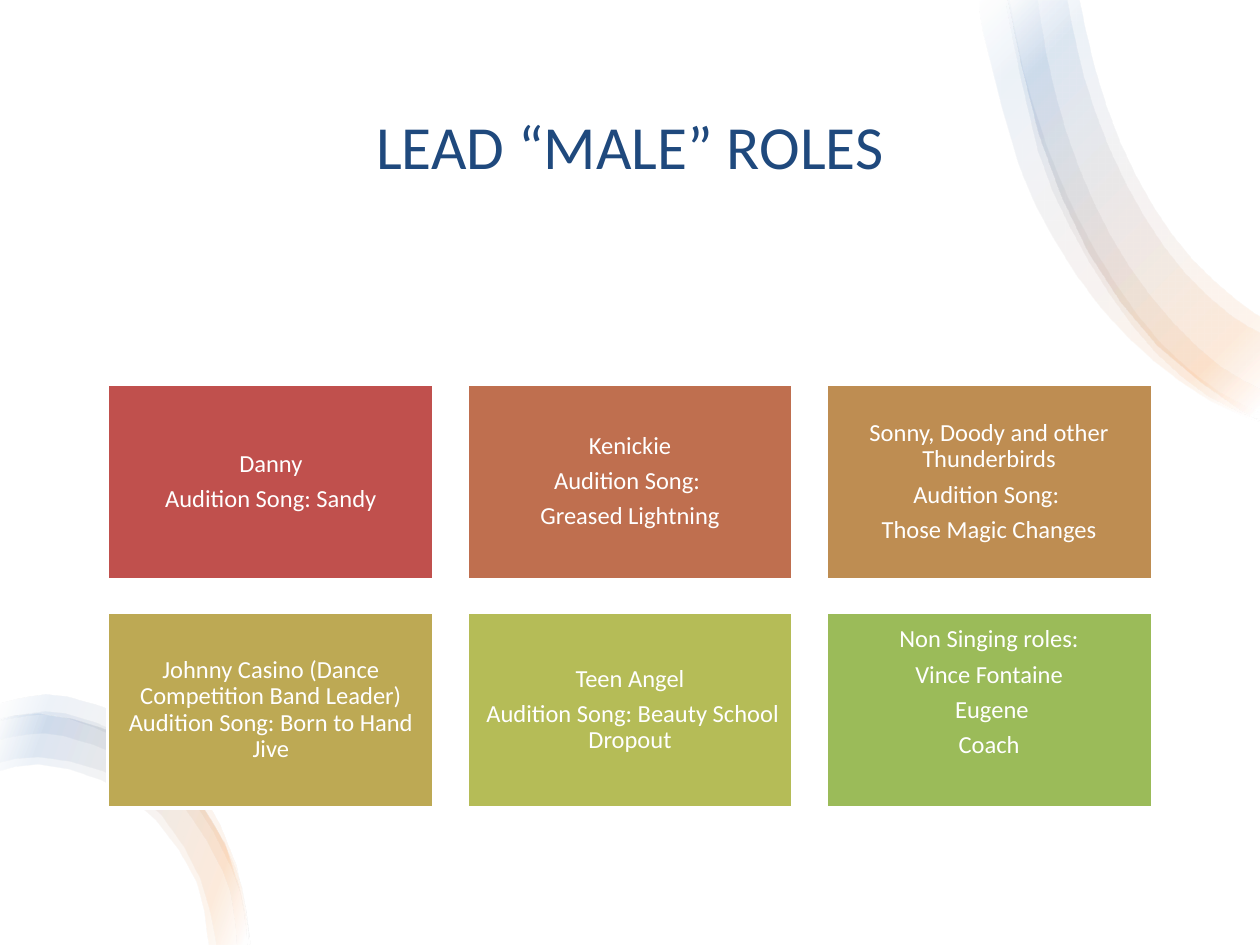
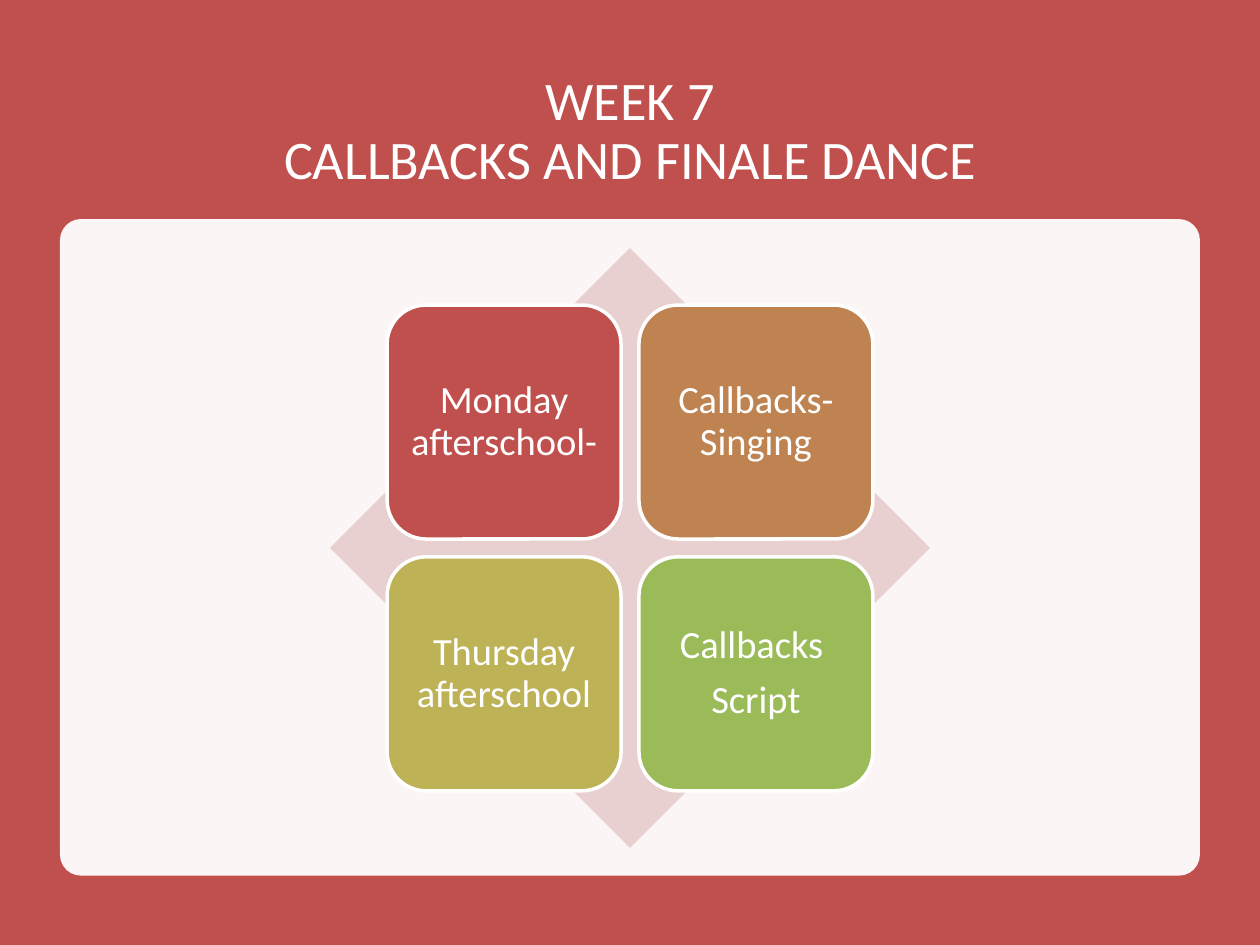
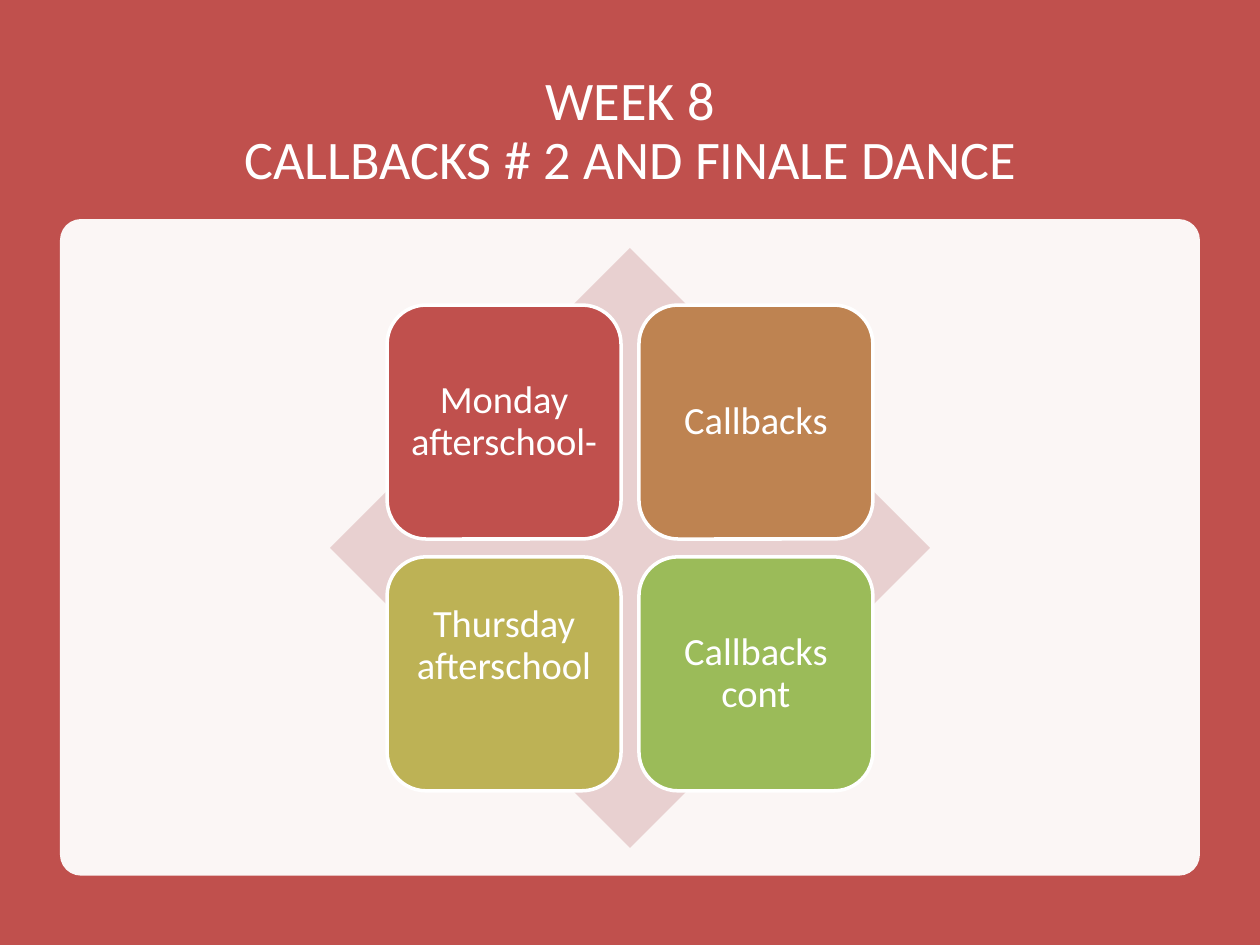
from lxml import etree
from pptx import Presentation
from pptx.dml.color import RGBColor
from pptx.enum import shapes, text
from pptx.oxml.ns import qn
from pptx.util import Pt

WHITE = RGBColor(0xFF, 0xFF, 0xFF)
NAVY = RGBColor(0x1F, 0x49, 0x7D)
BLUE = RGBColor(0x4F, 0x81, 0xBD)
ORANGE = RGBColor(0xF7, 0x96, 0x46)
RED = RGBColor(0xC0, 0x50, 0x4D)
RUST = RGBColor(0xBF, 0x6F, 0x4F)
COPPER = RGBColor(0xBE, 0x83, 0x51)
TAN = RGBColor(0xBE, 0x8D, 0x52)
GOLD = RGBColor(0xBD, 0xA9, 0x54)
OLIVE = RGBColor(0xBD, 0xB2, 0x55)
LIME = RGBColor(0xB5, 0xBC, 0x57)
GREEN = RGBColor(0x9B, 0xBB, 0x59)
PINK = RGBColor(0xE8, 0xD0, 0xD0)

FONT = "Calibri"
SLIDE_W, SLIDE_H = 720, 540
RECT = shapes.MSO_SHAPE.RECTANGLE
ROUND = shapes.MSO_SHAPE.ROUNDED_RECTANGLE
DIAMOND = shapes.MSO_SHAPE.DIAMOND

# Cards: fill, paragraphs, extra room below the text
ROLES = [
    (RED, ["Danny", "Audition Song: Sandy"], 0),
    (RUST, ["Kenickie", "Audition Song: ", "Greased Lightning"], 0),
    (TAN, ["Sonny, Doody and other Thunderbirds", "Audition Song: ", "Those Magic Changes"], 0),
    (GOLD, ["Johnny Casino (Dance Competition Band Leader) Audition Song: Born to Hand Jive"], 0),
    (LIME, ["Teen Angel", " Audition Song: Beauty School Dropout"], 0),
    (GREEN, ["Non Singing roles:", "Vince Fontaine", " Eugene", "Coach"], 20),
]
WEEKS = [
    ("WEEK 7\vCALLBACKS AND FINALE DANCE", [
        (RED, ["Monday afterschool-"], 0),
        (COPPER, ["Callbacks- Singing"], 0),
        (OLIVE, ["Thursday afterschool"], 0),
        (GREEN, ["Callbacks ", "Script"], 0),
    ]),
    ("WEEK 8\vCALLBACKS # 2 AND FINALE DANCE", [
        (RED, ["Monday afterschool- "], 0),
        (COPPER, ["Callbacks"], 0),
        (OLIVE, ["Thursday afterschool"], 32),
        (GREEN, ["Callbacks cont"], 0),
    ]),
]

# Swooshes: gradient angle, then bands as (outer edge, inner edge)
TOP_EDGE = [(720, 239), (707, 233), (661, 197), (622, 144), (594, 77), (577, 3), (576, 0)]
LOW_EDGE = [(142, 540), (141, 529), (128, 482), (100, 443), (63, 418), (22, 408), (0, 412)]
SWOOSHES = [
    (135, [
        ([(720, 241), (693, 230), (660, 207), (629, 176), (603, 138), (582, 94), (562, 19),
          (560, 0)],
         [(577, 0), (584, 37), (598, 83), (616, 125), (638, 163), (664, 197), (695, 223),
          (720, 236)]),
        (TOP_EDGE,
         [(617, 0), (626, 40), (640, 81), (659, 118), (681, 148), (706, 171), (720, 181)]),
        ([(720, 240), (690, 226), (660, 201), (634, 168), (611, 129), (593, 86), (577, 14),
          (575, 0)],
         [(593, 0), (598, 32), (609, 75), (625, 116), (645, 152), (670, 184), (697, 209),
          (720, 222)]),
        (TOP_EDGE,
         [(610, 0), (619, 42), (634, 85), (654, 124), (677, 156), (703, 180), (720, 190)]),
    ]),
    (160, [
        (LOW_EDGE,
         [(0, 441), (22, 437), (58, 446), (89, 469), (112, 504), (118, 534), (119, 540)]),
        (LOW_EDGE,
         [(0, 436), (22, 433), (59, 441), (92, 466), (114, 502), (122, 533), (123, 540)]),
        ([(142, 540), (140, 518), (133, 493), (109, 451), (76, 423), (37, 408), (17, 408),
          (0, 411)],
         [(0, 423), (17, 420), (36, 421), (72, 434), (104, 460), (127, 498), (133, 519),
          (135, 540)]),
        ([(143, 540), (135, 495), (113, 449), (80, 414), (38, 398), (17, 398), (0, 402)],
         [(0, 412), (17, 409), (37, 410), (75, 426), (108, 454), (132, 496), (139, 520),
          (141, 540)]),
    ]),
]
BAND_STOPS = [(2, WHITE), (16, ORANGE), (85, BLUE), (100, WHITE)]
BAND_ALPHA = 10


def set_alpha(color_element, percent):
    etree.SubElement(color_element, qn("a:alpha"), val=str(percent * 1000))


def smooth(points, steps=2):
    """Return points on a Catmull-Rom curve through the given ones."""
    padded = [points[0], *points, points[-1]]
    curve = [points[0]]
    for a, b, c, d in zip(padded, padded[1:], padded[2:], padded[3:]):
        for i in range(1, steps + 1):
            t = i / steps
            curve.append(tuple(
                (2 * q + (r - p) * t + (2 * p - 5 * q + 4 * r - w) * t ** 2
                 + (3 * q - p - 3 * r + w) * t ** 3) / 2
                for p, q, r, w in zip(a, b, c, d)))
    return curve


def add_band(s, outer, inner, angle):
    outline = [(Pt(x), Pt(y)) for x, y in smooth(outer) + smooth(inner)]
    builder = s.shapes.build_freeform(*outline[0])
    builder.add_line_segments(outline[1:], close=True)
    sp = builder.convert_to_shape()
    sp.shadow.inherit = False
    sp.line.fill.background()
    sp.fill.gradient()
    sp.fill.gradient_angle = angle
    stops = sp.element.spPr.find(qn("a:gradFill")).find(qn("a:gsLst"))
    for stop in list(stops):
        stops.remove(stop)
    for position, color in BAND_STOPS:
        stop = etree.SubElement(stops, qn("a:gs"), pos=str(position * 1000))
        set_alpha(etree.SubElement(stop, qn("a:srgbClr"), val=str(color)), BAND_ALPHA)


def add_box(s, kind, left, top, width, height, fill, line=None):
    sp = s.shapes.add_shape(kind, Pt(left), Pt(top), Pt(width), Pt(height))
    sp.shadow.inherit = False
    sp.fill.solid()
    sp.fill.fore_color.rgb = fill
    if line is None:
        sp.line.fill.background()
    else:
        sp.line.color.rgb = line
        sp.line.width = Pt(2)
    return sp


def format_paragraph(p, size, color, line_spacing):
    p.alignment = text.PP_ALIGN.CENTER
    p.line_spacing = line_spacing
    p.font.name, p.font.size, p.font.color.rgb = FONT, Pt(size), color


def add_card_grid(s, cards, columns, kind, left, top, width, height, gap, size, inset):
    for i, (fill, lines, room_below) in enumerate(cards):
        row, column = divmod(i, columns)
        sp = add_box(s, kind, left + column * (width + gap), top + row * (height + gap),
                     width, height, fill, WHITE)
        tf = sp.text_frame
        tf.word_wrap = True
        tf.vertical_anchor = text.MSO_ANCHOR.MIDDLE
        tf.margin_left = tf.margin_right = tf.margin_top = Pt(inset)
        tf.margin_bottom = Pt(inset + room_below)
        tf.text = "\n".join(lines)
        for p in tf.paragraphs:
            format_paragraph(p, size, WHITE, 0.9)
            p.space_after = Pt(0.35 * size)


def add_titled_slide(prs, title, backdrop, box, size, color, line_spacing):
    s = prs.slides.add_slide(prs.slide_layouts[5])
    sp = s.shapes.title
    sp.left, sp.top, sp.width, sp.height = map(Pt, box)
    tf = sp.text_frame
    tf.text = title
    tf.auto_size = text.MSO_AUTO_SIZE.NONE
    tf.vertical_anchor = text.MSO_ANCHOR.MIDDLE
    format_paragraph(tf.paragraphs[0], size, color, line_spacing)
    cover = add_box(s, RECT, 0, 0, SLIDE_W, SLIDE_H, backdrop)
    sp.element.addprevious(cover.element)
    return s


def add_roles_slide(prs):
    s = add_titled_slide(prs, "LEAD “MALE” ROLES", WHITE, (47.5, 36, 625, 93.6), 35, NAVY, 1.0)
    for angle, bands in SWOOSHES:
        for outer, inner in bands:
            add_band(s, outer, inner, angle)
    columns, width, gap = 3, 186.6, 18.6
    left = (SLIDE_W - columns * width - (columns - 1) * gap) / 2
    add_card_grid(s, ROLES, columns, RECT, left, 219.5, width, 111.8, gap, 14, 4.2)


def add_week_slide(prs, title, cards):
    s = add_titled_slide(prs, title, RED, (49.5, 36, 621, 79.2), 31, WHITE, 0.9)
    panel = add_box(s, ROUND, 34.3, 125.2, 651.4, 375.2, WHITE)
    panel.adjustments[0] = 0.032
    set_alpha(panel.element.spPr.find(qn("a:solidFill"))[0], 95)
    diamond, card, gap = 342.8, 133.7, 10.2
    middle_x, middle_y = SLIDE_W / 2, 313.1
    add_box(s, DIAMOND, middle_x - diamond / 2, middle_y - diamond / 2, diamond, diamond, PINK)
    reach = card + gap / 2
    add_card_grid(s, cards, 2, ROUND, middle_x - reach, middle_y - reach,
                  card, card, gap, 22, 6.6)


def main():
    prs = Presentation()
    prs.slide_width, prs.slide_height = Pt(SLIDE_W), Pt(SLIDE_H)
    add_roles_slide(prs)
    for title, cards in WEEKS:
        add_week_slide(prs, title, cards)
    prs.save("out.pptx")


if __name__ == "__main__":
    main()
